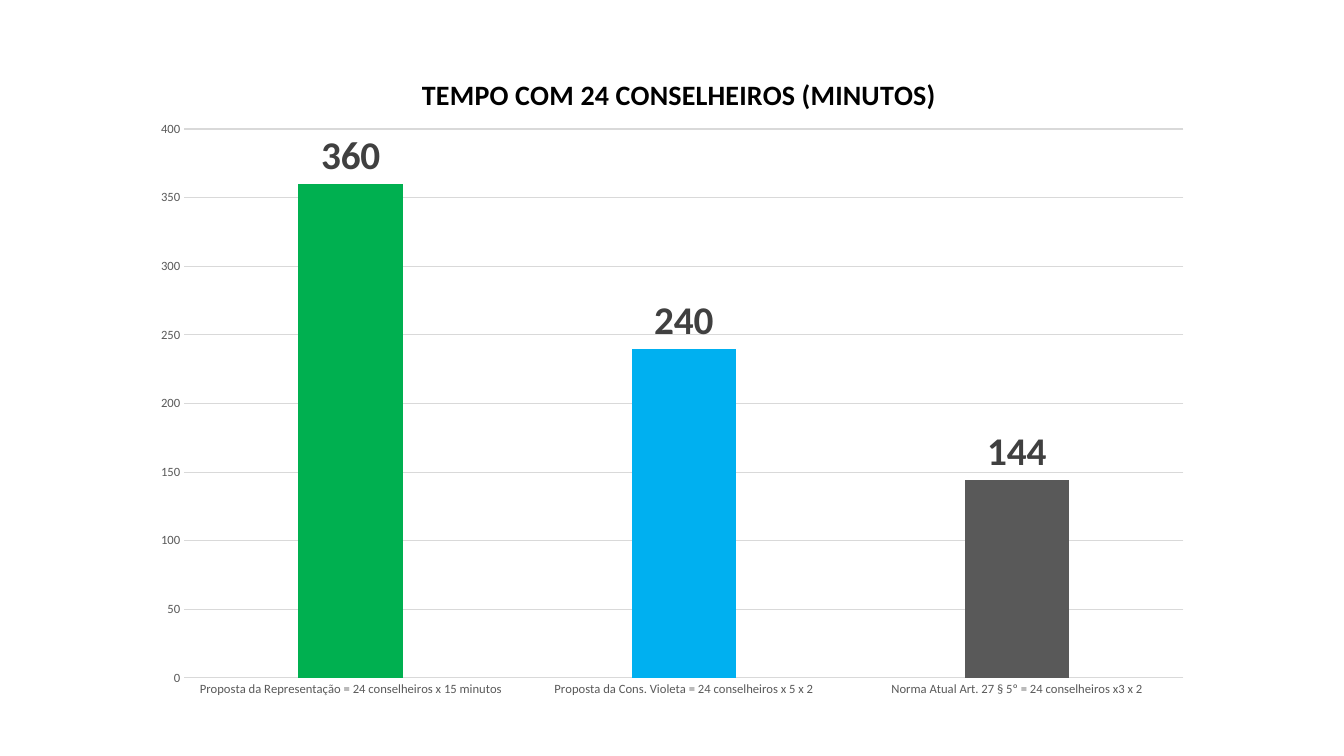
"""Build a slide with a column chart of speaking time for 24 council members."""
import pptx
import pptx.chart.data
import pptx.dml.color
import pptx.enum.chart
import pptx.oxml
import pptx.oxml.ns
import pptx.util

TITLE = "TEMPO COM 24 CONSELHEIROS (MINUTOS)"
BARS = [
    ("Proposta da Representação = 24 conselheiros x 15 minutos", 360, "green"),
    ("Proposta da Cons. Violeta = 24 conselheiros x 5 x 2", 240, "blue"),
    ("Norma Atual Art. 27 § 5º = 24 conselheiros x3 x 2", 144, "gray"),
]
COLORS = {"green": "00B050", "blue": "00B0F0", "gray": "595959", "series": "4472C4",
          "grid": "D9D9D9", "label": "404040", "title": "000000"}
FONTS = {
    "base": {"size": 10, "color": "title"},
    "axis": {"size": 9, "color": "gray"},
    "title": {"size": 20, "bold": True, "color": "title"},
    "label": {"size": 28, "bold": True, "color": "label"},
}
SLIDE = (13.33, 7.5)
CHART = (1.39, 0.45, 10.56, 6.59)
TITLE_SHARE = {"x": 0.26, "y": 0.036}
PLOT_SHARE = {"x": 0.0413, "y": 0.126, "w": 0.9385, "h": 0.8265}


def rgb(name):
    return pptx.dml.color.RGBColor.from_string(COLORS[name])


def set_font(font, style):
    values = {"name": "Calibri", "bold": False, **FONTS[style]}
    values["size"] = pptx.util.Pt(values["size"])
    font.color.rgb = rgb(values.pop("color"))
    for key, value in values.items():
        setattr(font, key, value)


def set_line(line):
    line.color.rgb = rgb("grid")
    line.width = pptx.util.Pt(0.75)


def set_layout(parent, index, shares, inner=False):
    for old in parent.findall(pptx.oxml.ns.qn("c:layout")):
        parent.remove(old)
    target = '<c:layoutTarget val="inner"/>' if inner else ""
    modes = "".join(f'<c:{k}Mode val="edge"/>' for k in shares if k in "xy")
    sizes = "".join(f'<c:{k} val="{v}"/>' for k, v in shares.items())
    parent.insert(index, pptx.oxml.parse_xml(
        f'<c:layout {pptx.oxml.ns.nsdecls("c")}><c:manualLayout>'
        f"{target}{modes}{sizes}</c:manualLayout></c:layout>"))


def add_time_chart(s):
    cats, values, fills = zip(*BARS)
    data = pptx.chart.data.CategoryChartData()
    data.categories = cats
    data.add_series("Series 1", values)
    chart = s.shapes.add_chart(pptx.enum.chart.XL_CHART_TYPE.COLUMN_CLUSTERED,
                               *map(pptx.util.Inches, CHART), data).chart
    set_font(chart.font, "base")
    chart.has_legend = False
    chart.has_title = True
    p = chart.chart_title.text_frame.paragraphs[0]
    r = p.add_run()
    r.text = TITLE
    set_font(r.font, "title")
    chart.chart_title.include_in_layout = False

    for axis in (chart.category_axis, chart.value_axis):
        axis.major_tick_mark = axis.minor_tick_mark = pptx.enum.chart.XL_TICK_MARK.NONE
        set_font(axis.tick_labels.font, "axis")
    set_line(chart.category_axis.format.line)
    axis = chart.value_axis
    axis.minimum_scale, axis.maximum_scale, axis.major_unit = 0, 400, 50
    axis.format.line.fill.background()
    set_line(axis.major_gridlines.format.line)

    plot = chart.plots[0]
    plot.gap_width, plot.overlap, plot.vary_by_categories = 219, -27, False
    ser = plot.series[0]
    ser.format.fill.solid()
    ser.format.fill.fore_color.rgb = rgb("series")
    for i, name in enumerate(fills):
        fill = ser.points[i].format.fill
        fill.solid()
        fill.fore_color.rgb = rgb(name)
    labels = ser.data_labels
    labels.show_value = True
    labels.position = pptx.enum.chart.XL_LABEL_POSITION.OUTSIDE_END
    set_font(labels.font, "label")

    root = chart.element
    set_layout(root.find(".//" + pptx.oxml.ns.qn("c:title")), 1, TITLE_SHARE)
    set_layout(root.find(".//" + pptx.oxml.ns.qn("c:plotArea")), 0, PLOT_SHARE, True)


def main():
    prs = pptx.Presentation()
    prs.slide_width, prs.slide_height = map(pptx.util.Inches, SLIDE)
    s = prs.slides.add_slide(prs.slide_layouts[6])
    add_time_chart(s)
    prs.save("out.pptx")


if __name__ == "__main__":
    main()
